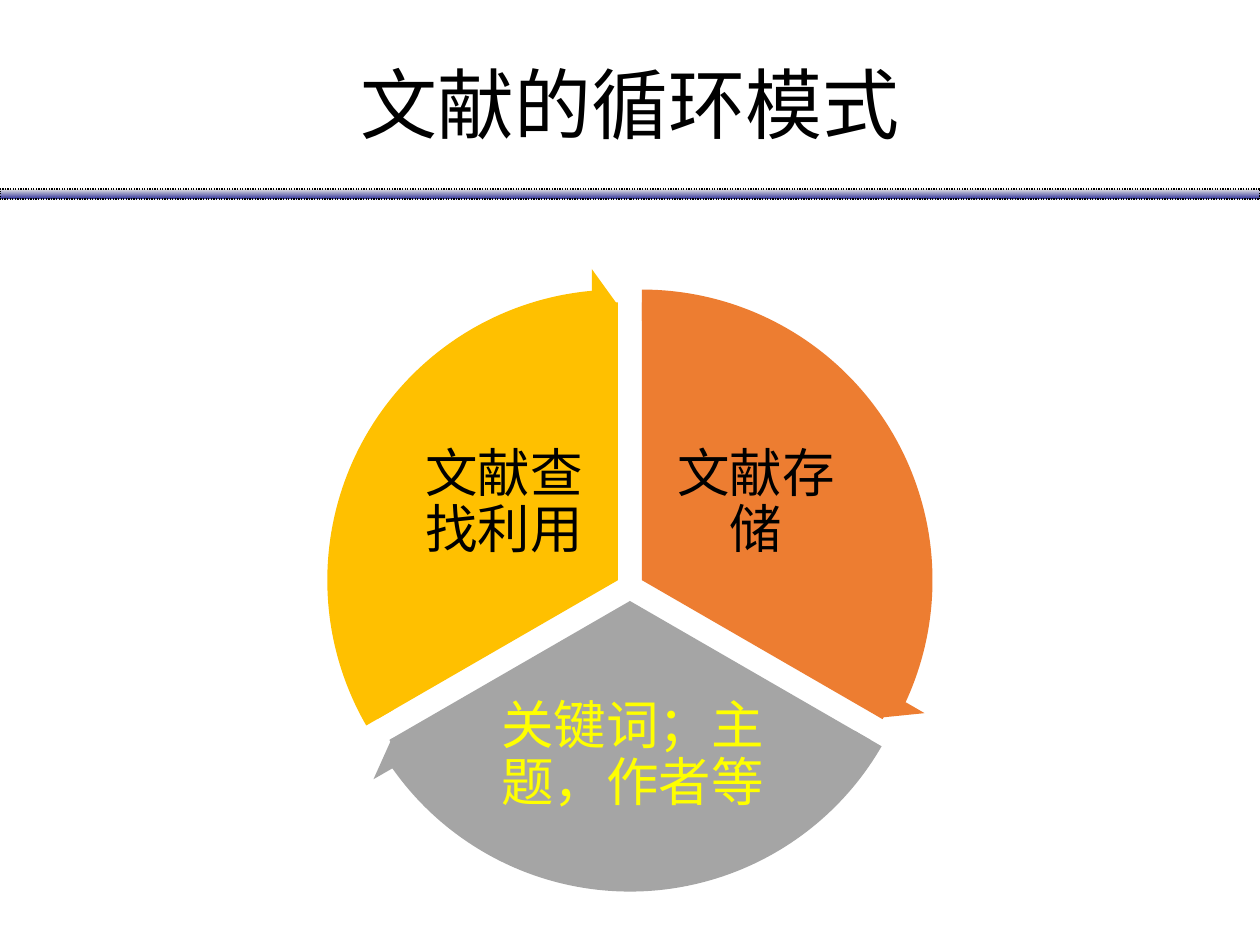
from dataclasses import dataclass
from math import cos, radians, sin

from lxml import etree
from pptx import Presentation
from pptx import util as u
from pptx.dml.color import RGBColor
from pptx.enum import dml, shapes, text
from pptx.oxml.ns import qn


@dataclass(frozen=True)
class Theme:
    font: str = "Noto Sans CJK JP"
    title_size: int = 44
    label_size: int = 30
    ink: str = "000000"
    highlight: str = "FFFF00"
    orange: str = "ED7D31"
    grey: str = "A5A5A5"
    gold: str = "FFC000"
    bar_dark: str = "333399"
    bar_light: str = "E7E6E6"


@dataclass(frozen=True)
class Box:
    left: float
    top: float
    width: float
    height: float

    def emu(self) -> list[u.Emu]:
        return [u.Inches(v) for v in (self.left, self.top, self.width, self.height)]


@dataclass(frozen=True)
class Stage:
    label: str
    label_box: Box
    fill: str
    ink: str


THEME = Theme()
WIDTH, HEIGHT = 10, 7.5
HUB_X, HUB_Y = WIDTH / 2, 4.66
PIE_SIZE, ARROW_SIZE = 4.41, 4.96
SPREAD = 0.11
FIRST_ANGLE = 270
HEAD_SETBACK = 5.46
ANGLE_UNIT = 0.6

STAGES = [
    Stage("文献存储", Box(5.21, 3.34, 1.58, 1.31), THEME.orange, THEME.ink),
    Stage("关键词；主题，作者等", Box(3.84, 5.42, 2.36, 1.16), THEME.grey, THEME.highlight),
    Stage("文献查找利用", Box(3.21, 3.34, 1.58, 1.31), THEME.gold, THEME.ink),
]
SWEEP = 360 / len(STAGES)


def rgb(color: str) -> RGBColor:
    return RGBColor.from_string(color)


def add_text(page, words: str, place: Box, size: int, color: str, inset: float | None = None) -> None:
    box = page.shapes.add_textbox(*place.emu())
    frame = box.text_frame
    frame.word_wrap = True
    frame.vertical_anchor = text.MSO_ANCHOR.MIDDLE
    if inset is not None:
        frame.margin_left = frame.margin_right = u.Inches(inset)
        frame.margin_top = frame.margin_bottom = u.Inches(inset)
    frame.text = words
    para = frame.paragraphs[0]
    para.alignment = text.PP_ALIGN.CENTER
    para.line_spacing = 0.9
    span = para.runs[0]
    span.font.size = u.Pt(size)
    span.font.color.rgb = rgb(color)
    span.font.name = THEME.font
    etree.SubElement(span.font._element, qn("a:ea"), typeface=THEME.font)


def add_round(page, kind, index: int, size: float, adjustments: list[float]) -> None:
    bisector = radians(FIRST_ANGLE + (index + 0.5) * SWEEP)
    left = HUB_X + SPREAD * cos(bisector) - size / 2
    top = HUB_Y + SPREAD * sin(bisector) - size / 2
    shape = page.shapes.add_shape(kind, *Box(left, top, size, size).emu())
    for position, value in enumerate(adjustments):
        shape.adjustments[position] = value
    shape.shadow.inherit = False
    shape.fill.solid()
    shape.fill.fore_color.rgb = rgb(STAGES[index].fill)
    shape.line.fill.background()


def stage_angles(index: int) -> tuple[float, float]:
    start = (FIRST_ANGLE + index * SWEEP) % 360
    return start, (start + SWEEP) % 360


def add_cycle(page) -> None:
    for index, stage in enumerate(STAGES):
        start, end = stage_angles(index)
        add_round(page, shapes.MSO_SHAPE.PIE, index, PIE_SIZE,
                  [start * ANGLE_UNIT, end * ANGLE_UNIT])
        add_text(page, stage.label, stage.label_box, THEME.label_size, stage.ink, 0.04)
    for index in range(len(STAGES)):
        start, end = stage_angles(index)
        head = (end - HEAD_SETBACK) * ANGLE_UNIT
        add_round(page, shapes.MSO_SHAPE.CIRCULAR_ARROW, index, ARROW_SIZE,
                  [0.05, HEAD_SETBACK * ANGLE_UNIT, head, start * ANGLE_UNIT, 0.06])


def add_bar(page) -> None:
    bar = page.shapes.add_shape(shapes.MSO_SHAPE.RECTANGLE, *Box(0, 1.5, WIDTH, 0.08).emu())
    bar.shadow.inherit = False
    bar.fill.gradient()
    bar.fill.gradient_angle = 90
    for stop, color in zip(bar.fill.gradient_stops, (THEME.bar_dark, THEME.bar_light)):
        stop.color.rgb = rgb(color)
    bar.line.color.rgb = rgb(THEME.ink)
    bar.line.width = u.Pt(0.75)
    bar.line.dash_style = dml.MSO_LINE.ROUND_DOT


def main() -> None:
    deck = Presentation()
    deck.slide_width, deck.slide_height = u.Inches(WIDTH), u.Inches(HEIGHT)
    page = deck.slides.add_slide(deck.slide_layouts[6])
    add_cycle(page)
    add_bar(page)
    add_text(page, "文献的循环模式", Box(1.29, 0.3, 7.42, 1.12), THEME.title_size, THEME.ink)
    deck.save("out.pptx")


if __name__ == "__main__":
    main()
